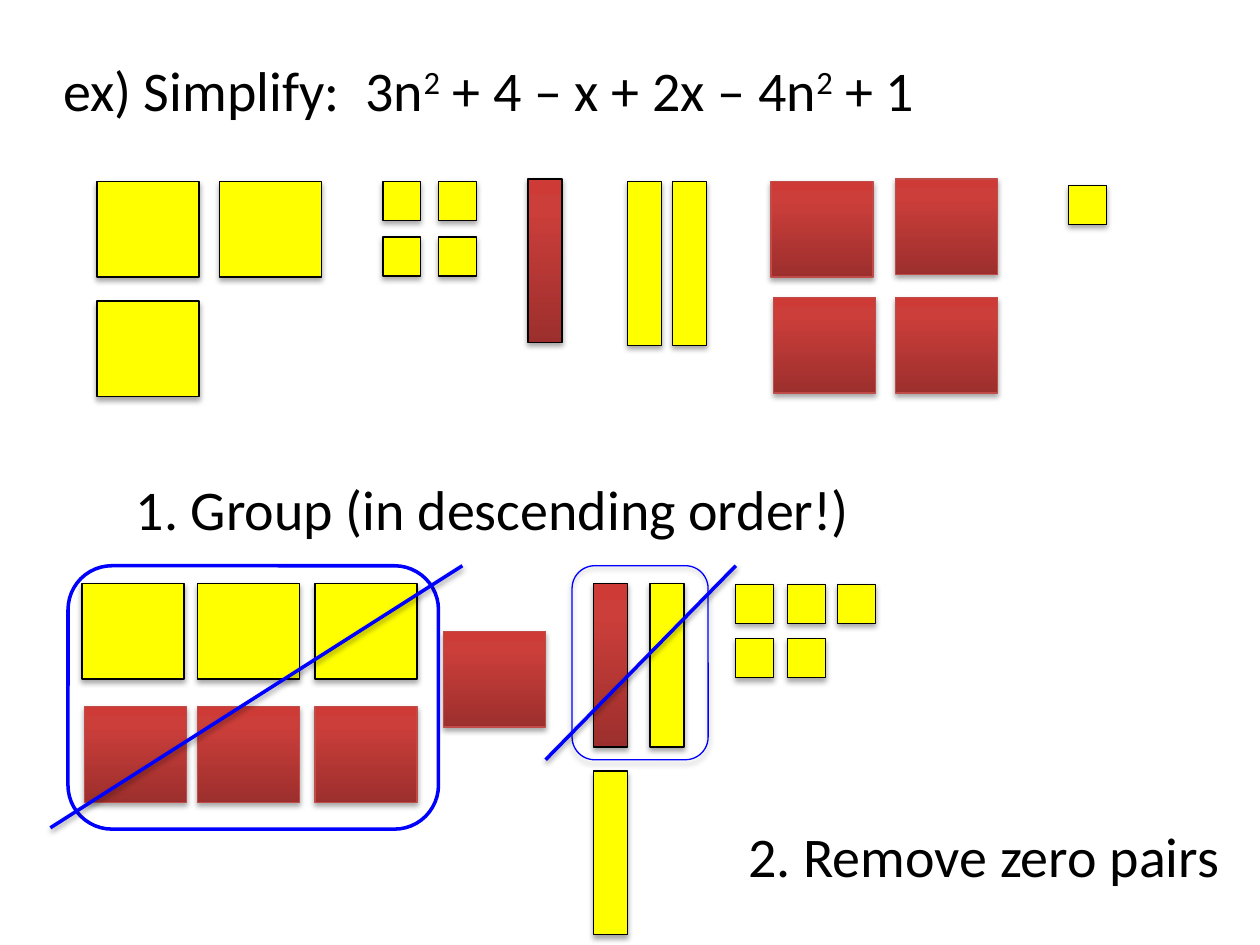
from copy import deepcopy
from dataclasses import dataclass
from itertools import product

from lxml import etree
from pptx import Presentation
from pptx import util as u
from pptx.dml.color import RGBColor as Rgb
from pptx.enum import shapes, text
from pptx.oxml.ns import qn

PX = 9144


@dataclass(frozen=True)
class Theme:
    """Colours, type and line widths of the slide."""
    font: str = "Calibri"
    size: int = 32
    ink: str = "000000"
    plus: str = "FFFF00"
    rim: str = "BF4C48"
    mark: str = "0000FF"
    minus: tuple = ((0, "9C2F2D"), (0.8, "CB3E3A"), (1, "CE3B37"))
    thin: float = 0.75
    thick: float = 2


LOOK = Theme()
SQUARE, BAR, UNIT = (81, 76), (27, 130), (30, 31)


def px(*vals):
    """Turn px into EMU."""
    return [u.Emu(v * PX) for v in vals]


def write(frame, words, size=LOOK.size, color=LOOK.ink, fit=text.MSO_AUTO_SIZE.NONE):
    """Fill a frame with one line; parts between carets are superscript."""
    frame.word_wrap = True
    frame.auto_size = fit
    frame.vertical_anchor = text.MSO_ANCHOR.TOP
    para = frame.paragraphs[0]
    para.alignment = text.PP_ALIGN.LEFT
    para.space_before = u.Pt(0)
    for i, part in enumerate(words.split("^")):
        run = para.add_run()
        run.text = part
        run.font.name, run.font.size = LOOK.font, u.Pt(size)
        run.font.color.rgb = Rgb.from_string(color)
        if i % 2:
            run._r.get_or_add_rPr().set("baseline", "30000")


def shade(item, dist=23000, alpha=35000):
    """Give a shape or connector a soft drop shadow."""
    props = item._element.spPr
    effects = props.find(qn("a:effectLst"))
    if effects is None:
        effects = etree.SubElement(props, qn("a:effectLst"))
    drop = etree.SubElement(effects, qn("a:outerShdw"), blurRad="40000",
                            dist=str(dist), dir="5400000", rotWithShape="0")
    color = etree.SubElement(drop, qn("a:srgbClr"), val="000000")
    etree.SubElement(color, qn("a:alpha"), val=str(alpha))


def stroke(item, color, width):
    """Set the line of a shape or connector."""
    item.line.color.rgb = Rgb.from_string(color)
    item.line.width = u.Pt(width)


def blend(shape):
    """Fill a shape with the negative tile gradient."""
    shape.fill.gradient()
    shape.fill.gradient_angle = 90
    stops = shape._element.spPr.find(".//" + qn("a:gsLst"))
    stops.append(deepcopy(stops[0]))
    for stop, (pos, color) in zip(shape.fill.gradient_stops, LOOK.minus):
        stop.position = pos
        stop.color.rgb = Rgb.from_string(color)


def tile(slide, x, y, size, neg=False):
    """Place one algebra tile."""
    shape = slide.shapes.add_shape(shapes.MSO_SHAPE.RECTANGLE, *px(x, y, *size))
    shape.shadow.inherit = False
    if neg:
        blend(shape)
    else:
        shape.fill.solid()
        shape.fill.fore_color.rgb = Rgb.from_string(LOOK.plus)
    stroke(shape, LOOK.rim if neg and size == SQUARE else LOOK.ink, LOOK.thin)
    shade(shape)


def tiles(slide, x, y, spots, size, neg=False):
    """Place tiles of one kind at offsets from a corner."""
    for dx, dy in spots:
        tile(slide, x + dx, y + dy, size, neg)


def ring(slide, x, y, w, h, width, soft=False):
    """Circle a zero pair with a rounded outline."""
    shape = slide.shapes.add_shape(shapes.MSO_SHAPE.ROUNDED_RECTANGLE, *px(x, y, w, h))
    shape.shadow.inherit = False
    shape.fill.background()
    stroke(shape, LOOK.mark, width)
    if soft:
        shade(shape)


def strike(slide, x, y, w, h):
    """Cross out a box from bottom left to top right."""
    line = slide.shapes.add_connector(shapes.MSO_CONNECTOR.STRAIGHT,
                                      *px(x, y + h, x + w, y))
    stroke(line, LOOK.mark, LOOK.thick)
    shade(line, 20000, 38000)


def head(slide, x, y, w, h):
    """Place the expression in the title."""
    title = slide.shapes.title
    title.left, title.top, title.width, title.height = px(x, y, w, h)
    write(title.text_frame, "ex) Simplify:  3n^2^ + 4 – x + 2x – 4n^2^ + 1")


def step(slide, x, y, w, h, words):
    """Place the text of one step."""
    box = slide.shapes.add_textbox(*px(x, y, w, h))
    write(box.text_frame, words, fit=text.MSO_AUTO_SIZE.SHAPE_TO_FIT_TEXT)


def model(slide, x, y):
    """Lay out the expression term by term."""
    tiles(slide, x, y + 2, [(0, 0), (0, 95), (97, 0)], SQUARE)
    tiles(slide, x + 227, y + 2, product((0, 44), repeat=2), UNIT)
    tile(slide, x + 342, y, BAR, True)
    tiles(slide, x + 421, y + 2, [(0, 0), (36, 0)], BAR)
    tiles(slide, x + 535, y, [(99, 0), (99, 94), (0, 2), (2, 94)], SQUARE, True)
    tile(slide, x + 771, y + 5, UNIT)


def groups(slide, x, y):
    """Lay out like tiles together."""
    tiles(slide, x, y, [(0, 0), (92, 0), (185, 0)], SQUARE)
    tiles(slide, x, y, [(2, 98), (92, 98), (185, 98), (287, 38)], SQUARE, True)
    tile(slide, x + 406, y, BAR, True)
    tiles(slide, x + 406, y, [(0, 149), (45, 0)], BAR)
    spots = [(0, 0), (41, 0), (81, 0), (0, 43), (41, 43)]
    tiles(slide, x + 519, y + 1, spots, UNIT)


def zeros(slide, x, y):
    """Circle and cross out the zero pairs."""
    ring(slide, x + 14, y, 294, 209, LOOK.thick)
    strike(slide, x, y, 327, 208)
    ring(slide, x + 414, y, 108, 154, LOOK.thin, True)
    strike(slide, x + 393, y, 151, 154)


def main():
    """Build and save the slide."""
    deck = Presentation()
    deck.slide_width, deck.slide_height = px(1000, 750)
    slide = deck.slides.add_slide(deck.slide_layouts[5])
    head(slide, 40, 39, 900, 495)
    model(slide, 77, 142)
    step(slide, 98, 372, 750, 64, "1. Group (in descending order!)")
    groups(slide, 65, 463)
    step(slide, 584, 647, 399, 64, "2. Remove zero pairs")
    zeros(slide, 40, 449)
    deck.save("out.pptx")


if __name__ == "__main__":
    main()
